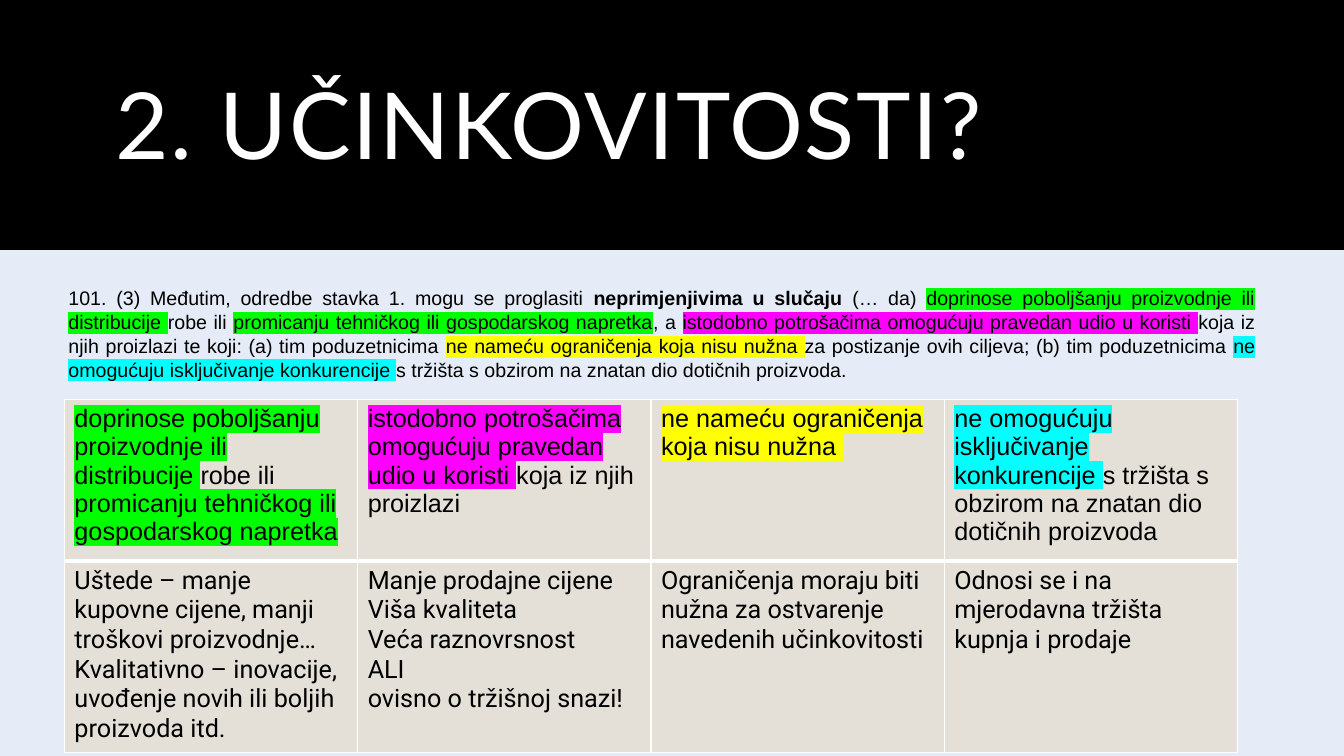
from dataclasses import dataclass

import pptx
import pptx.dml.color
import pptx.enum.shapes
import pptx.enum.text
import pptx.oxml
import pptx.oxml.ns
import pptx.util
from lxml import etree

Pt = pptx.util.Pt
Align = pptx.enum.text.PP_ALIGN
Anchor = pptx.enum.text.MSO_ANCHOR

BLACK, WHITE = "000000", "FFFFFF"
BACKGROUND, CELL_FILL = "E5ECF7", "E4E0D8"
GREEN, MAGENTA, YELLOW, CYAN = "00FF00", "FF00FF", "FFFF00", "00FFFF"


@dataclass(frozen=True)
class Run:
    text: str
    highlight: str = ""
    bold: bool = False


@dataclass(frozen=True)
class Column:
    condition: list[Run]
    explanation: list[str]


CONTRIBUTION = [
    Run("doprinose poboljšanju proizvodnje ili distribucije ", GREEN),
    Run("robe ili "),
    Run("promicanju tehničkog ili gospodarskog napretka", GREEN),
]
FAIR_SHARE = Run("istodobno potrošačima omogućuju pravedan udio u koristi ", MAGENTA)
NECESSITY = Run("ne nameću ograničenja koja nisu nužna ", YELLOW)
COMPETITION = Run("ne omogućuju isključivanje konkurencije ", CYAN)

ARTICLE = [
    Run("101. (3) Međutim, odredbe stavka 1. mogu se proglasiti "),
    Run("neprimjenjivima u slučaju ", bold=True),
    Run("(… da) "),
    *CONTRIBUTION,
    Run(", a "),
    FAIR_SHARE,
    Run("koja iz njih proizlazi te koji: (a) tim poduzetnicima "),
    NECESSITY,
    Run("za postizanje ovih ciljeva; (b) tim poduzetnicima "),
    COMPETITION,
    Run("s tržišta s obzirom na znatan dio dotičnih proizvoda."),
]

COLUMNS = [
    Column(CONTRIBUTION, [
        "Uštede – manje kupovne cijene, manji troškovi proizvodnje…",
        "Kvalitativno – inovacije, uvođenje novih ili boljih proizvoda itd.",
    ]),
    Column([FAIR_SHARE, Run("koja iz njih proizlazi")], [
        "Manje prodajne cijene", "Viša kvaliteta", "Veća raznovrsnost", "ALI",
        "ovisno o tržišnoj snazi!",
    ]),
    Column([NECESSITY],
           ["Ograničenja moraju biti nužna za ostvarenje navedenih učinkovitosti"]),
    Column([COMPETITION, Run("s tržišta s obzirom na znatan dio dotičnih proizvoda")],
           ["Odnosi se i na mjerodavna tržišta kupnja i prodaje"]),
]


def rgb(color: str) -> pptx.dml.color.RGBColor:
    return pptx.dml.color.RGBColor.from_string(color)


def paint(target, color: str) -> None:
    """Give a shape, cell or background a solid fill."""
    target.fill.solid()
    target.fill.fore_color.rgb = rgb(color)


def add_color_element(parent, color: str) -> None:
    etree.SubElement(parent, pptx.oxml.ns.qn("a:srgbClr"), val=color)


def write(text_frame, paragraphs: list[list[Run]], *, font: str, size: float,
          color: str = BLACK, align=Align.LEFT, line_spacing: float = 1.0,
          space: float = 0, tracking: float = 0) -> None:
    text_frame.word_wrap = True
    for index, runs in enumerate(paragraphs):
        paragraph = text_frame.paragraphs[0] if index == 0 else text_frame.add_paragraph()
        paragraph.alignment = align
        paragraph.line_spacing = line_spacing
        paragraph.space_before = paragraph.space_after = Pt(space)
        for item in runs:
            run = paragraph.add_run()
            run.text = item.text
            run.font.name, run.font.size, run.font.bold = font, Pt(size), item.bold
            run.font.color.rgb = rgb(color)
            properties = run.font._element
            if tracking:
                properties.set("spc", str(round(tracking * 100)))
            if item.highlight:
                highlight = etree.Element(pptx.oxml.ns.qn("a:highlight"))
                add_color_element(highlight, item.highlight)
                properties.find(pptx.oxml.ns.qn("a:solidFill")).addnext(highlight)


def add_rectangle(slide, left: float, top: float, width: float, height: float, color: str):
    shape = slide.shapes.add_shape(pptx.enum.shapes.MSO_SHAPE.RECTANGLE,
                                   Pt(left), Pt(top), Pt(width), Pt(height))
    shape.shadow.inherit = False
    paint(shape, color)
    shape.line.fill.background()
    return shape


def set_borders(cell, bottom: float) -> None:
    properties = cell._tc.get_or_add_tcPr()
    widths = {"a:lnL": 1, "a:lnR": 1, "a:lnT": 1, "a:lnB": bottom}
    for position, (tag, width) in enumerate(widths.items()):
        line = etree.Element(pptx.oxml.ns.qn(tag), w=str(Pt(width)))
        add_color_element(etree.SubElement(line, pptx.oxml.ns.qn("a:solidFill")), WHITE)
        properties.insert(position, line)


def add_conditions_table(slide) -> None:
    row_heights = [108, 134]
    column_width = 209.5
    table = slide.shapes.add_table(
        len(row_heights), len(COLUMNS), Pt(46), Pt(285.5),
        Pt(column_width * len(COLUMNS)), Pt(sum(row_heights))).table
    table.first_row = table.horz_banding = False
    for row, height in zip(table.rows, row_heights):
        row.height = Pt(height)
    for index, column in enumerate(COLUMNS):
        table.columns[index].width = Pt(column_width)
        condition, explanation = table.cell(0, index), table.cell(1, index)
        for cell, bottom in ((condition, 3), (explanation, 1)):
            paint(cell, CELL_FILL)
            set_borders(cell, bottom)
        write(condition.text_frame, [column.condition], font="Arial", size=18)
        write(explanation.text_frame, [[Run(text)] for text in column.explanation],
              font="Roboto", size=18)


def main() -> None:
    presentation = pptx.Presentation()
    presentation.slide_width, presentation.slide_height = Pt(960), Pt(540)
    slide = presentation.slides.add_slide(presentation.slide_layouts[6])
    paint(slide.background, BACKGROUND)

    add_rectangle(slide, 0, 0, 960, 178.5, BLACK)
    title = slide.shapes.add_textbox(Pt(75.6), Pt(25.2), Pt(808.6), Pt(134))
    title.text_frame.vertical_anchor = Anchor.MIDDLE
    write(title.text_frame, [[Run("2. UČINKOVITOSTI?")]], font="Lato", size=66,
          color=WHITE, line_spacing=0.9, tracking=1.2)

    article = add_rectangle(slide, 41.8, 200.9, 861.8, 299.5, BACKGROUND)
    article.text_frame.vertical_anchor = Anchor.TOP
    write(article.text_frame, [ARTICLE], font="Arial", size=14,
          align=Align.JUSTIFY, line_spacing=1.01, space=7)

    add_conditions_table(slide)
    presentation.save("out.pptx")


if __name__ == "__main__":
    main()
